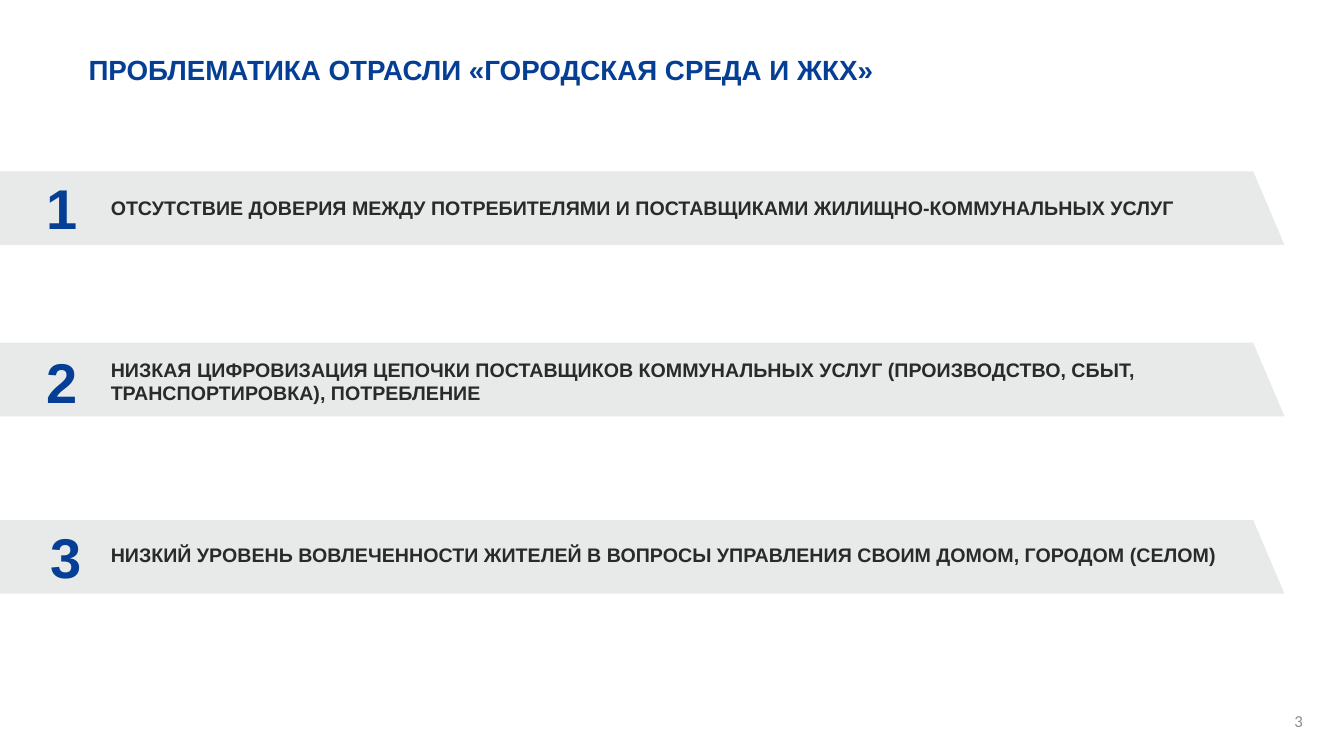
"""Builds a slide with three numbered problem banners."""
import pptx
import pptx.util
import pptx.dml.color
import pptx.enum.text

PX = 9144
BLUE, DARK, PALE, GRAY = "053E95", "292A2B", "E8EAE9", "8C8C8C"
TITLE = "ПРОБЛЕМАТИКА ОТРАСЛИ «ГОРОДСКАЯ СРЕДА И ЖКХ»"
PAGE = "3"
BANNERS = [
    {"top": 170, "text": "ОТСУТСТВИЕ ДОВЕРИЯ МЕЖДУ ПОТРЕБИТЕЛЯМИ И ПОСТАВЩИКАМИ ЖИЛИЩНО-КОММУНАЛЬНЫХ УСЛУГ",
     "label": (100, 189, 1085, 34), "digit": (36, 167)},
    {"top": 340, "text": "НИЗКАЯ ЦИФРОВИЗАЦИЯ ЦЕПОЧКИ ПОСТАВЩИКОВ КОММУНАЛЬНЫХ УСЛУГ (ПРОИЗВОДСТВО, СБЫТ, ТРАНСПОРТИРОВКА), ПОТРЕБЛЕНИЕ",
     "label": (100, 350, 1085, 57), "digit": (36, 340)},
    {"top": 516, "text": "НИЗКИЙ УРОВЕНЬ ВОВЛЕЧЕННОСТИ ЖИТЕЛЕЙ В ВОПРОСЫ УПРАВЛЕНИЯ СВОИМ ДОМОМ, ГОРОДОМ (СЕЛОМ)",
     "label": (100, 534, 1119, 34), "digit": (40, 513)},
]
BAR_W, BAR_H, SLANT = 1274, 73, 31
DIGIT_W, DIGIT_H = 39, 77
ALIGN = pptx.enum.text.PP_ALIGN
ANCHOR = pptx.enum.text.MSO_ANCHOR


def color(code):
    return pptx.dml.color.RGBColor.from_string(code)


def add_text(slide, box, text, size, code, align=ALIGN.LEFT,
             anchor=ANCHOR.TOP, font="Arial", bold=True):
    frame = slide.shapes.add_textbox(*(n * PX for n in box)).text_frame
    frame.word_wrap = True
    frame.vertical_anchor = anchor
    frame.text = text
    line = frame.paragraphs[0]
    line.alignment = align
    style = line.runs[0].font
    style.name, style.size, style.bold = font, pptx.util.Pt(size), bold
    style.color.rgb = color(code)
    return line


def add_bar(slide, top):
    pen = slide.shapes.build_freeform(0, top, scale=PX)
    base = top + BAR_H
    pen.add_line_segments([(BAR_W - SLANT, top), (BAR_W, base), (0, base)])
    bar = pen.convert_to_shape()
    bar.shadow.inherit = False
    bar.fill.solid()
    bar.fill.fore_color.rgb = color(PALE)
    bar.line.fill.background()


def main():
    deck = pptx.Presentation()
    deck.slide_width, deck.slide_height = 1333 * PX, 750 * PX
    slide = deck.slides.add_slide(deck.slide_layouts[6])
    add_text(slide, (1002, 695, 300, 40), PAGE, 12, GRAY, ALIGN.RIGHT,
             ANCHOR.MIDDLE, "Calibri", False)
    title = add_text(slide, (78, 44, 811, 54), TITLE, 19.8, BLUE,
                     anchor=ANCHOR.MIDDLE)
    title.line_spacing = 0.9
    for rank, banner in enumerate(BANNERS, 1):
        add_bar(slide, banner["top"])
        add_text(slide, banner["label"], banner["text"], 14, DARK)
        add_text(slide, (*banner["digit"], DIGIT_W, DIGIT_H), str(rank), 40,
                 BLUE, ALIGN.CENTER)
    deck.save("out.pptx")


if __name__ == "__main__":
    main()
